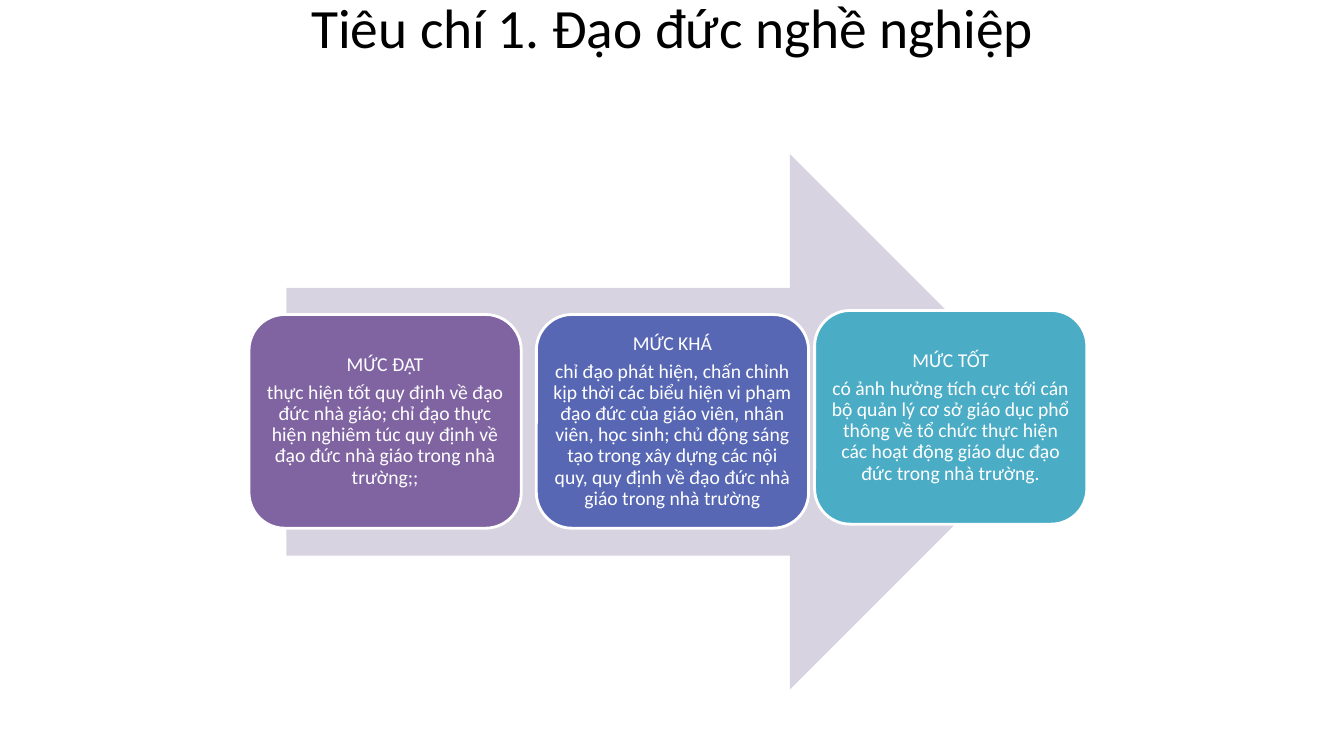
from pptx import Presentation
from pptx.dml.color import RGBColor
from pptx.enum.shapes import MSO_SHAPE
from pptx.enum.text import MSO_ANCHOR, PP_ALIGN
from pptx.util import Inches, Pt

ARROW = MSO_SHAPE.RIGHT_ARROW
ROUND = MSO_SHAPE.ROUNDED_RECTANGLE
MIDDLE = MSO_ANCHOR.MIDDLE
CENTER = PP_ALIGN.CENTER

# Level cards: left, top, fill, heading, text
LEVELS = [
    (2.47, 3.12, "8064A2", "MỨC ĐẠT",
     "thực hiện tốt quy định về đạo đức nhà giáo; chỉ đạo thực hiện nghiêm túc "
     "quy định về đạo đức nhà giáo trong nhà trường;;"),
    (5.32, 3.12, "5767B4", "MỨC KHÁ",
     "chỉ đạo phát hiện, chấn chỉnh kịp thời các biểu hiện vi phạm đạo đức của "
     "giáo viên, nhân viên, học sinh; chủ động sáng tạo trong xây dựng các nội "
     "quy, quy định về đạo đức nhà giáo trong nhà trường"),
    (8.08, 3.08, "4BACC6", "MỨC TỐT",
     "có ảnh hưởng tích cực tới cán bộ quản lý cơ sở giáo dục phổ thông về tổ "
     "chức thực hiện các hoạt động giáo dục đạo đức trong nhà trường."),
]


def color(code):
    return RGBColor.from_string(code)


class Deck:
    font = "Calibri"
    white = "FFFFFF"
    black = "000000"

    def __init__(self, slide):
        self.slide = slide

    def label(self, frame, lines, size, ink, inset):
        frame.word_wrap = True
        frame.vertical_anchor = MIDDLE
        frame.margin_left = frame.margin_right = Inches(inset)
        frame.margin_top = frame.margin_bottom = Inches(inset)
        frame.text = "\n".join(lines)
        for para in frame.paragraphs:
            para.alignment = CENTER
            para.font.name = self.font
            para.font.size = Pt(size)
            para.font.color.rgb = color(ink)

    def title(self, text, left, top, width, height):
        box = self.slide.shapes.title
        box.left, box.top = Inches(left), Inches(top)
        box.width, box.height = Inches(width), Inches(height)
        self.label(box.text_frame, [text], 39.6, self.black, 0)

    def shape(self, kind, left, top, width, height, fill):
        item = self.slide.shapes.add_shape(
            kind, Inches(left), Inches(top), Inches(width), Inches(height))
        item.shadow.inherit = False
        item.fill.solid()
        item.fill.fore_color.rgb = color(fill)
        item.line.fill.background()
        return item

    def card(self, left, top, fill, head, text):
        item = self.shape(ROUND, left, top, 2.7, 2.12, fill)
        item.line.color.rgb = color(self.white)
        item.line.width = Pt(2)
        self.label(item.text_frame, [head, text], 14, self.white, 0.06)
        for para in item.text_frame.paragraphs:
            para.line_spacing = 0.9
            para.space_after = Pt(4.9)


def main():
    show = Presentation()
    show.slide_width, show.slide_height = Inches(13.33), Inches(7.5)
    deck = Deck(show.slides.add_slide(show.slide_layouts[5]))

    # Title
    deck.title("Tiêu chí 1. Đạo đức nghề nghiệp", 0.67, 0, 12, 0.52)

    # Arrow behind the cards
    deck.shape(ARROW, 2.84, 1.53, 7.65, 5.31, "D8D3E0")

    # Three levels
    for level in LEVELS:
        deck.card(*level)

    show.save("out.pptx")


if __name__ == "__main__":
    main()
